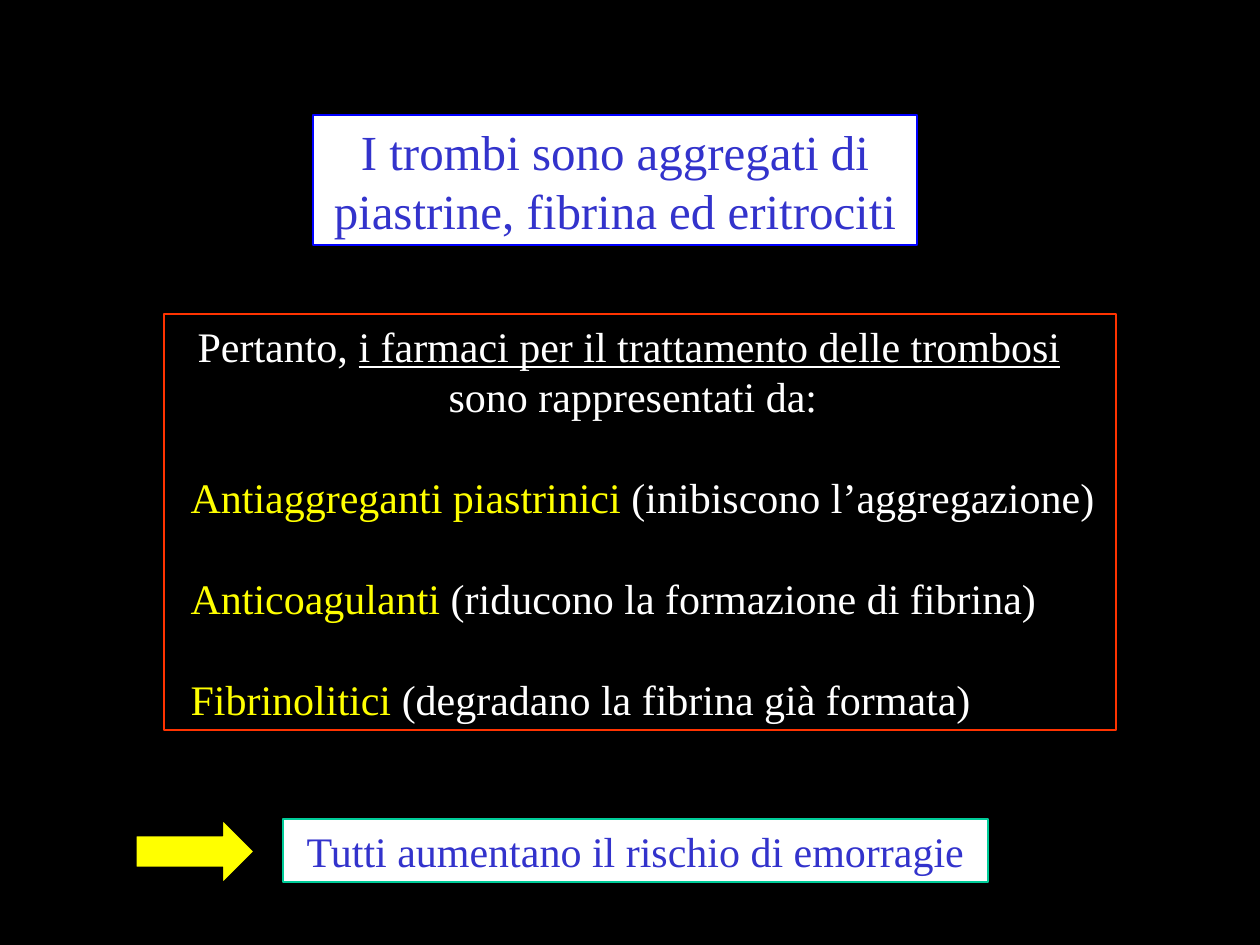
from pptx import Presentation
from pptx.dml.color import RGBColor
from pptx.enum.shapes import MSO_SHAPE as Shape
from pptx.enum.text import MSO_ANCHOR as Anchor, MSO_AUTO_SIZE as Auto, PP_ALIGN as Align
from pptx.util import Emu, Pt
from lxml import etree

BLACK = RGBColor(0x00, 0x00, 0x00)
WHITE = RGBColor(0xFF, 0xFF, 0xFF)
INDIGO = RGBColor(0x33, 0x33, 0xCC)
BLUE = RGBColor(0x00, 0x00, 0xFF)
RED = RGBColor(0xFF, 0x33, 0x00)
GREEN = RGBColor(0x00, 0xCC, 0x99)
YELLOW = RGBColor(0xFF, 0xFF, 0x00)
FONT = "Times New Roman"
LEAD = 1.2  # line pitch as a multiple of the text size
A = "{http://schemas.openxmlformats.org/drawingml/2006/main}"


def px(n):
    return Emu(int(n * 914400 / 126))


def frame(shape, box, line, fill=None):
    """Place a shape and give it a thin border and an optional fill."""
    shape.left, shape.top, shape.width, shape.height = map(px, box)
    if fill is None:
        shape.fill.background()
    else:
        shape.fill.solid()
        shape.fill.fore_color.rgb = fill
    shape.line.color.rgb = line
    shape.line.width = Pt(0.75)
    text = shape.text_frame
    text.word_wrap = True
    text.auto_size = Auto.NONE
    text.vertical_anchor = Anchor.TOP
    return text


def style(para, size, colors, align=Align.LEFT, indent=0, gap=0):
    """Format a paragraph; colors holds one colour for each run."""
    para.alignment = align
    para.line_spacing = Pt(size * LEAD)
    para.space_before, para.space_after = Pt(gap), Pt(0)
    props = para._p.get_or_add_pPr()
    props.set("marL", str(px(indent)))
    props.set("indent", "0")
    etree.SubElement(props, A + "buNone")
    for run, color in zip(para.runs, colors):
        run.font.name, run.font.size = FONT, Pt(size)
        run.font.color.rgb = color


def label(shape, box, words, size, line):
    """White box with centred text."""
    text = frame(shape, box, line, WHITE)
    text.text = words
    for para in text.paragraphs:
        style(para, size, [INDIGO], Align.CENTER)


def drugs(shape, box):
    """Bordered list: a two-line lead-in, then the drug classes."""
    size = 24
    text = frame(shape, box, RED)
    rows = [
        (("Pertanto, ", "i farmaci per il trattamento delle trombosi"), 21),
        (("sono rappresentati da:",), 272),
    ]
    items = [
        ("Antiaggreganti piastrinici ", "(inibiscono l’aggregazione)"),
        ("Anticoagulanti ", "(riducono la formazione di fibrina)"),
        ("Fibrinolitici ", "(degradano la fibrina già formata)"),
    ]
    rows += [(item, 14) for item in items]
    for i, (parts, indent) in enumerate(rows):
        para = text.add_paragraph() if i else text.paragraphs[0]
        for part in parts:
            para.add_run().text = part
        item = parts in items
        style(para, size, [YELLOW if item else WHITE, WHITE],
              indent=indent, gap=size * LEAD if item else 0)
    text.paragraphs[0].runs[1].font.underline = True


def risk(slide, box):
    """Arrow pointing at the closing remark."""
    x, y, w, h = box
    arrow = slide.shapes.add_shape(Shape.RIGHT_ARROW, 0, 0, 0, 0)
    arrow.shadow.inherit = False
    frame(arrow, (x, y + 1, 118, h), BLACK, YELLOW)
    note = slide.shapes.add_textbox(0, 0, 0, 0)
    label(note, (x + 147, y, w - 147, h),
          "Tutti aumentano il rischio di emorragie", 24, GREEN)


def main():
    deck = Presentation()
    deck.slide_width, deck.slide_height = px(1260), px(945)
    slide = deck.slides.add_slide(deck.slide_layouts[1])
    slide.background.fill.solid()
    slide.background.fill.fore_color.rgb = BLACK

    label(slide.shapes.title, (313, 115, 604, 130),
          "I trombi sono aggregati di\npiastrine, fibrina ed eritrociti", 28, BLUE)
    drugs(slide.placeholders[1], (164, 314, 952, 416))
    risk(slide, (136, 819, 852, 63))
    deck.save("out.pptx")


if __name__ == "__main__":
    main()
